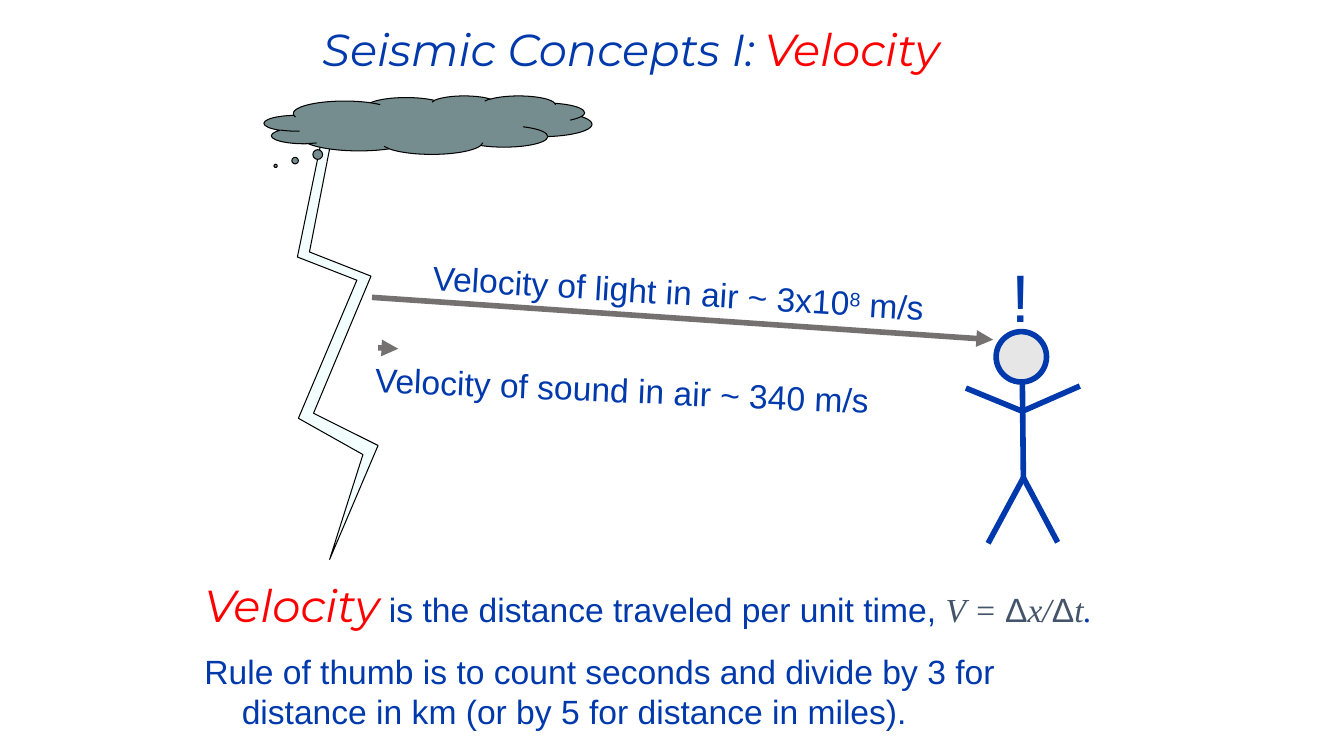
from lxml import etree
from pptx import Presentation
from pptx.dml.color import RGBColor
from pptx.enum.shapes import MSO_CONNECTOR, MSO_SHAPE
from pptx.enum.text import MSO_AUTO_SIZE
from pptx.oxml.ns import qn
from pptx.util import Pt

PX = 9144
STRAIGHT = MSO_CONNECTOR.STRAIGHT
CLOUD, OVAL = MSO_SHAPE.CLOUD_CALLOUT, MSO_SHAPE.OVAL
GROW = MSO_AUTO_SIZE.SHAPE_TO_FIT_TEXT
BLUE, RED, GRAY, SLATE = "0039AC", "FF0000", "767171", "44546A"
SANS, DISPLAY, SERIF = "Arial", "Montserrat", "Times New Roman"


def px(*lengths):
    """Turn pixel lengths into EMU."""
    return [length * PX for length in lengths]


def rgb(value):
    """Turn a hex string into a colour."""
    return RGBColor.from_string(value)


def add_run(paragraph, text, size=24, font=SANS, color=BLUE, italic=False, baseline=0):
    """Append one formatted run to a paragraph."""
    run = paragraph.add_run()
    run.text = text
    run.font.size = Pt(size)
    run.font.name = font
    run.font.italic = italic
    run.font.color.rgb = rgb(color)
    if baseline:
        run.font._element.set("baseline", str(baseline * 1000))


def add_text(slide, box, *paragraphs, rotation=0):
    """Place a text box whose paragraphs are lists of (text, format) runs."""
    label = slide.shapes.add_textbox(*px(*box))
    label.rotation = rotation
    frame = label.text_frame
    frame.word_wrap = False
    frame.auto_size = GROW
    for index, runs in enumerate(paragraphs):
        paragraph = frame.add_paragraph() if index else frame.paragraphs[0]
        for text, style in runs:
            add_run(paragraph, text, **style)
    return frame


def style_shape(shape, fill, line, width):
    """Give a shape a flat fill and an outline."""
    shape.shadow.inherit = False
    shape.fill.solid()
    shape.fill.fore_color.rgb = rgb(fill)
    shape.line.color.rgb = rgb(line)
    shape.line.width = Pt(width)


def add_line(slide, start, end, color, arrow=False):
    """Draw a thick straight line, with an arrowhead if wanted."""
    line = slide.shapes.add_connector(STRAIGHT, *px(*start, *end))
    line.line.color.rgb = rgb(color)
    line.line.width = Pt(4)
    if arrow:
        etree.SubElement(line.line._get_or_add_ln(), qn("a:tailEnd"), type="triangle")
    etree.SubElement(line._element.spPr, qn("a:effectLst"))


def add_title(slide, box):
    """Write the two-coloured slide title."""
    display = dict(size=32, font=DISPLAY, italic=True)
    add_text(slide, box, [("Seismic Concepts I:", display), (" ", {}),
                          ("Velocity", dict(display, color=RED))])


def add_definition(slide, box):
    """Write the definition of velocity and the rule of thumb."""
    symbol = dict(font=SERIF, color=SLATE, italic=True)
    delta = dict(color=SLATE)
    frame = add_text(
        slide, box,
        [("Velocity", dict(size=32, font=DISPLAY, color=RED, italic=True)), (" ", {}),
         ("is the distance traveled per unit time, ", {}),
         ("V = ", symbol), ("Δ", delta), ("x/", symbol), ("Δ", delta), ("t", symbol),
         (".", dict(symbol, color=BLUE))],
        [("Rule of thumb is to count seconds and divide by 3 for", {})],
        [("distance in km (or by 5 for distance in miles).", {})])
    rule, continuation = frame.paragraphs[1:]
    rule.space_before = Pt(14)
    continuation._p.get_or_add_pPr().set("marL", str(37 * PX))


def add_storm(slide, box):
    """Draw the lightning bolt under its cloud."""
    left, top, width, height = box
    bolt = [(59, 34), (33, 160), (92, 183), (34, 320), (98, 356), (65, 460),
            (113, 347), (49, 315), (106, 179), (45, 155), (68, 37)]
    points = [(left + x, top + y) for x, y in bolt]
    outline = slide.shapes.build_freeform(*points[0], scale=PX)
    outline.add_line_segments(points[1:], close=True)
    style_shape(outline.convert_to_shape(), "F3FFFF", "000000", 0.75)
    cloud = slide.shapes.add_shape(CLOUD, *px(left, top, width, height))
    cloud.adjustments[0], cloud.adjustments[1] = -0.465, 0.699
    style_shape(cloud, "768D8F", "000000", 0.75)


def add_observer(slide, box):
    """Draw the surprised stick figure."""
    left, top, width, height = box
    head = slide.shapes.add_shape(OVAL, *px(left + 30, top + 81, 50, 50))
    style_shape(head, "E7E6E6", BLUE, 4)
    neck, shoulder, hip = (56, 130), (56, 160), (57, 226)
    limbs = [(neck, hip), (shoulder, (0, 137)), (shoulder, (width, 135)),
             (hip, (22, height)), (hip, (91, height - 1))]
    for start, end in limbs:
        add_line(slide, (left + start[0], top + start[1]),
                 (left + end[0], top + end[1]), BLUE)
    add_text(slide, (left + 35, top, 39, 90), [("!", dict(size=48))])


def add_signals(slide, box):
    """Draw the light and sound arrows with their labels."""
    left, top, width, height = box
    add_line(slide, (left + 7, top + 30), (left + width, top + 72), GRAY, arrow=True)
    add_text(slide, (left + 57, top, 511, 50),
             [("Velocity of light in air ~ 3x10", {}), ("8", dict(baseline=30)),
              (" m/s", {})], rotation=3.6)
    add_line(slide, (left + 13, top + 80), (left + 33, top + 81), GRAY, arrow=True)
    add_text(slide, (left, top + height - 50, 512, 50),
             [("Velocity of sound in air ~ 340 m/s", {})], rotation=2.6)


def main():
    """Build and save the slide."""
    deck = Presentation()
    deck.slide_width, deck.slide_height = px(1333, 750)
    slide = deck.slides.add_slide(deck.slide_layouts[6])
    add_title(slide, (310, 17, 729, 64))
    add_definition(slide, (193, 568, 947, 165))
    add_storm(slide, (262, 95, 325, 58))
    add_observer(slide, (958, 248, 113, 291))
    add_signals(slide, (362, 265, 623, 147))
    deck.save("out.pptx")


if __name__ == "__main__":
    main()
